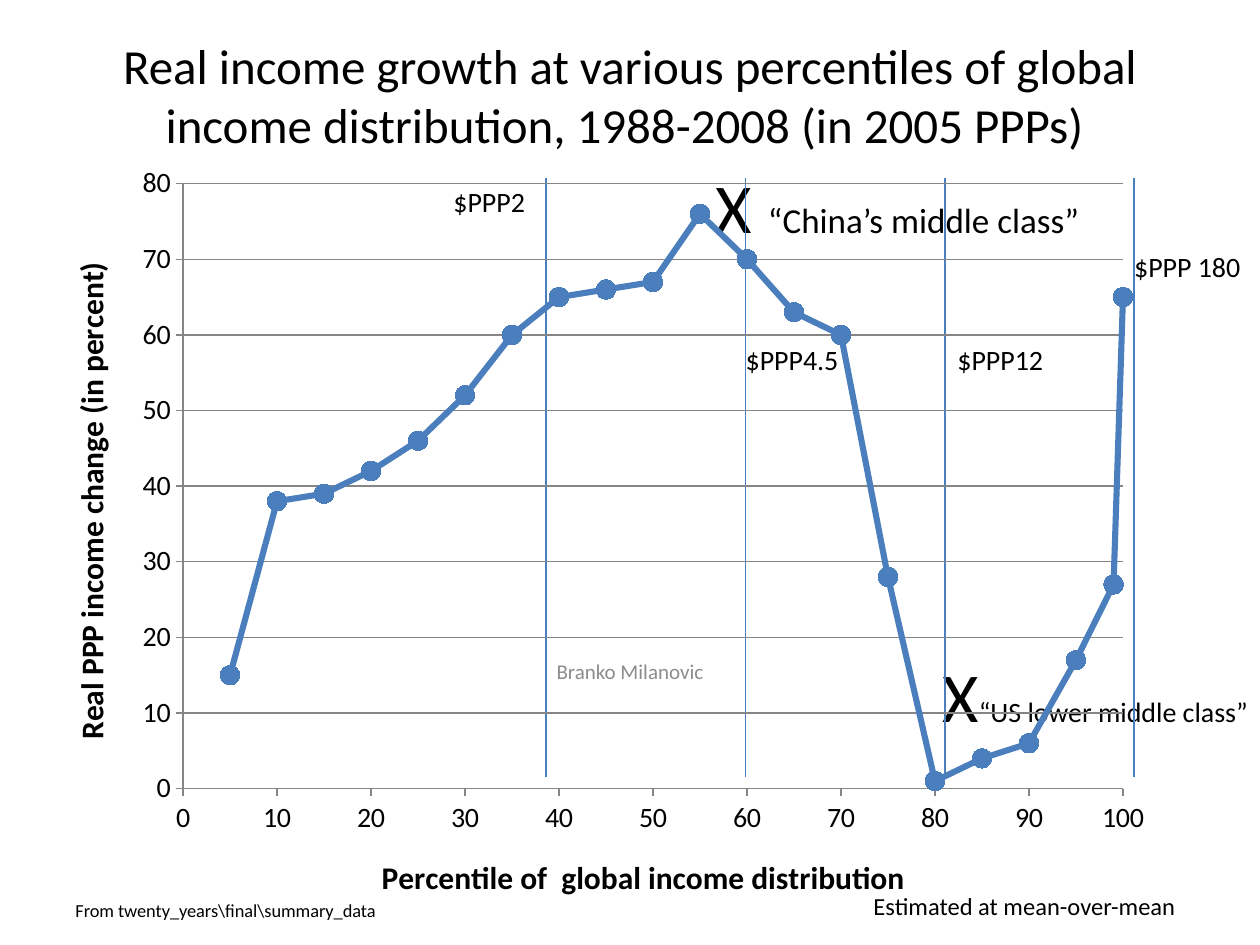
"""Build the slide on real income growth across the global distribution."""
from lxml.etree import SubElement
from pptx import Presentation
from pptx.chart.data import XyChartData
from pptx.dml.color import RGBColor
from pptx.enum.chart import XL_CHART_TYPE, XL_MARKER_STYLE, XL_TICK_MARK
from pptx.enum.shapes import MSO_CONNECTOR
from pptx.enum.text import MSO_ANCHOR, PP_ALIGN
from pptx.oxml import parse_xml
from pptx.oxml.ns import nsdecls, qn
from pptx.util import Pt

FONT, BLACK, GRAY, GRID, BLUE, RULE = "Calibri", "000000", "8C8C8C", "868686", "4B7EBC", "4B7EBC"
TITLE = "Real income growth at various percentiles of global income distribution, 1988-2008 (in 2005 PPPs) "
NOTES = [
    ((36, 12, 648, 84), [(TITLE, 28)], BLACK, True),
    ((36, 510, 312, 20), [("From twenty_years\\final\\summary_data", 10.5)], BLACK, False),
    ((531.5, 369.5, 207, 55), [("X", 40), ("“US lower middle class”", 16)], BLACK, False),
    ((402, 90, 258, 55), [("X ", 40), ("“China’s middle class”", 20)], BLACK, False),
    ((246, 369, 228, 29), [("Branko Milanovic", 12)], GRAY, True),
    ((252, 102, 60, 27), [("$PPP2", 16)], BLACK, False),
    ((419, 192, 73, 27), [("$PPP4.5", 16)], BLACK, False),
    ((540, 192, 96, 27), [("$PPP12", 16)], BLACK, False),
    ((641, 139, 79, 27), [("$PPP 180", 16)], BLACK, False),
    ((492, 505.5, 228, 24), [("Estimated at mean-over-mean", 14)], BLACK, False),
]
CUTS, TOP, END = [312, 540, 426, 648], 102, 444
BOX = (31, 90, 629, 428)
PLOT = {"x": 0.117, "y": 0.035, "w": 0.854, "h": 0.808}
RANKS = [*range(5, 100, 5), 99, 100]
GROWTH = [15, 38, 39, 42, 46, 52, 60, 65, 66, 67, 76, 70, 63, 60, 28, 1, 4, 6, 17, 27, 65]
AXES = ("Percentile of  global income distribution", 100), ("Real PPP income change (in percent)", 80)


def tint(code):
    return RGBColor.from_string(code)


def style(font, size, code=BLACK, bold=False):
    font.name, font.size, font.bold = FONT, Pt(size), bold
    font.color.rgb = tint(code)


def write(slide, box, runs, code, mid):
    frame = slide.shapes.add_textbox(*map(Pt, box)).text_frame
    frame.word_wrap = True
    frame.vertical_anchor = MSO_ANCHOR.MIDDLE if mid else MSO_ANCHOR.TOP
    para = frame.paragraphs[0]
    para.alignment = PP_ALIGN.CENTER if mid else PP_ALIGN.LEFT
    for text, size in runs:
        run = para.add_run()
        run.text = text
        style(run.font, size, code)


def rule(slide, x):
    line = slide.shapes.add_connector(MSO_CONNECTOR.STRAIGHT, Pt(x), Pt(TOP), Pt(x), Pt(END))
    line.line.color.rgb, line.line.width = tint(RULE), Pt(0.75)
    SubElement(line._element.spPr, qn("a:effectLst"))


def scale(axis, title, top):
    axis.minimum_scale, axis.maximum_scale, axis.major_unit = 0, top, 10
    axis.major_tick_mark, axis.minor_tick_mark = XL_TICK_MARK.OUTSIDE, XL_TICK_MARK.NONE
    axis.format.line.color.rgb = tint(GRID)
    style(axis.tick_labels.font, 16)
    run = axis.axis_title.text_frame.paragraphs[0].add_run()
    run.text = title
    style(run.font, 18, bold=True)


def plot(slide):
    data = XyChartData()
    points = data.add_series("Series 1")
    for x, y in zip(RANKS, GROWTH):
        points.add_data_point(x, y)
    chart = slide.shapes.add_chart(XL_CHART_TYPE.XY_SCATTER_SMOOTH, *map(Pt, BOX), data).chart
    chart.has_legend = chart.has_title = False
    style(chart.font, 10)
    for axis, (title, top) in zip((chart.category_axis, chart.value_axis), AXES):
        scale(axis, title, top)
    chart.category_axis.has_major_gridlines = False
    chart.value_axis.has_major_gridlines = True
    chart.value_axis.major_gridlines.format.line.color.rgb = tint(GRID)
    chart.plots[0].vary_by_categories = False
    curve = chart.plots[0].series[0]
    curve.smooth = True
    curve.format.line.color.rgb, curve.format.line.width = tint(BLUE), Pt(3.5)
    mark = curve.marker
    mark.style, mark.size = XL_MARKER_STYLE.CIRCLE, 11
    mark.format.fill.solid()
    mark.format.fill.fore_color.rgb = mark.format.line.color.rgb = tint(BLUE)
    area = chart._chartSpace.chart.plotArea
    for old in area.findall(qn("c:layout")):
        area.remove(old)
    modes = "".join(f'<c:{k}Mode val="edge"/>' for k in "xy")
    sizes = "".join(f'<c:{k} val="{v}"/>' for k, v in PLOT.items())
    area.insert(0, parse_xml(
        f'<c:layout {nsdecls("c")}><c:manualLayout><c:layoutTarget val="inner"/>'
        f"{modes}{sizes}</c:manualLayout></c:layout>"))


def main():
    deck = Presentation()
    deck.slide_width, deck.slide_height = Pt(720), Pt(540)
    slide = deck.slides.add_slide(deck.slide_layouts[6])
    for note in NOTES:
        write(slide, *note)
    for x in CUTS:
        rule(slide, x)
    plot(slide)
    deck.save("out.pptx")


if __name__ == "__main__":
    main()
